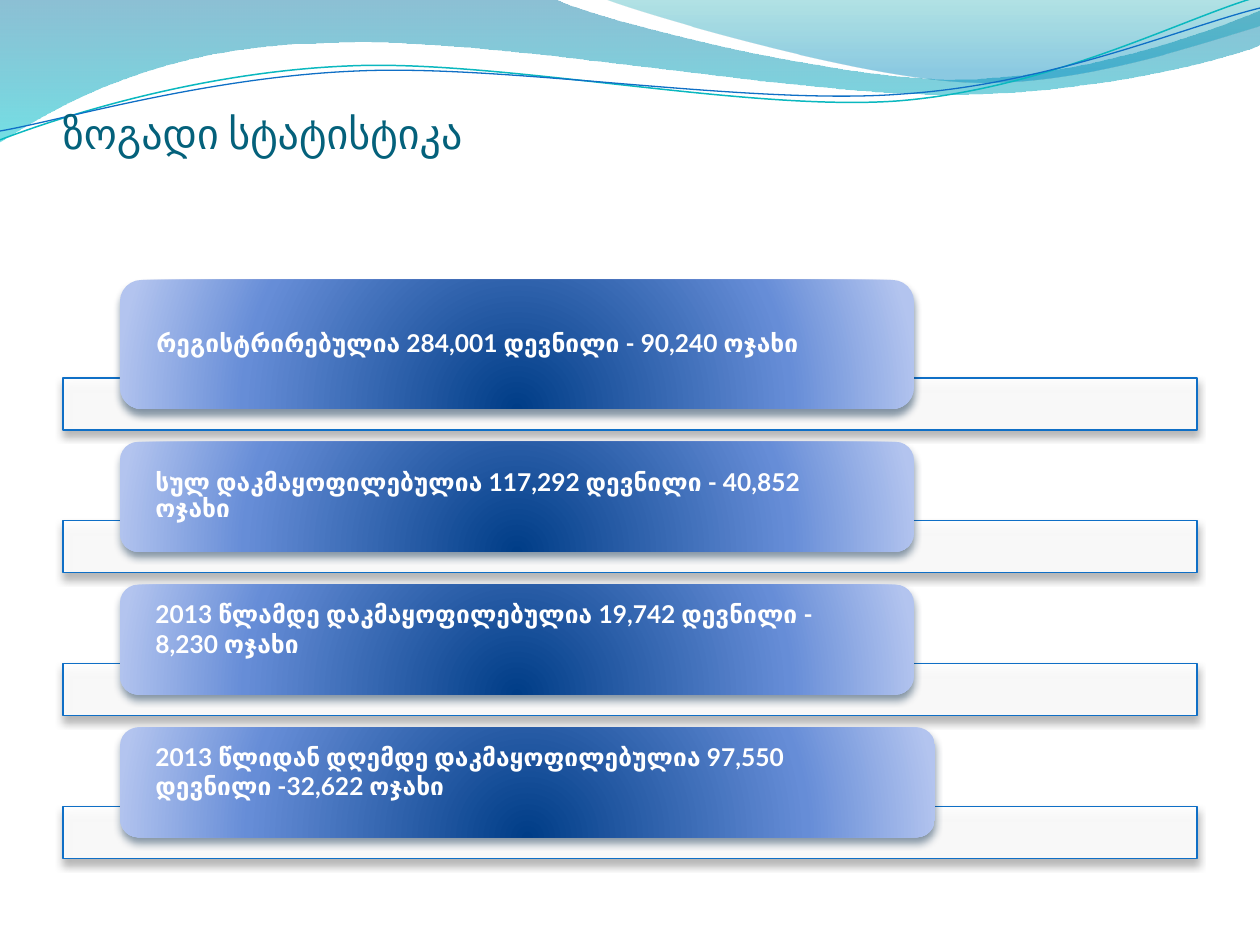
from dataclasses import dataclass
from math import cos, radians, sin

from lxml import etree
from pptx import Presentation
from pptx.dml.color import RGBColor
from pptx.enum.shapes import MSO_SHAPE as SHAPE
from pptx.enum.text import MSO_ANCHOR as ANCHOR, PP_ALIGN as ALIGN
from pptx.oxml.ns import qn
from pptx.util import Emu, Pt


@dataclass(frozen=True)
class Theme:
    title: str = "04617B"
    label: str = "FFFFFF"
    bar: str = "FFFFFF"
    accent: str = "0F6FC6"
    teal: str = "0AB8BF"
    bar_shadow: str = "5A5A5A"
    tab_shadow: str = "042747"
    title_font: str = "Calibri"
    label_font: str = "Lato"
    title_size: int = 24
    label_size: int = 14


T = Theme()
PX = 914400 / 126  # EMU per px

TITLE = "ზოგადი სტატისტიკა"

# label, tab width, tab height, bottom inset, line spacing
ROWS = [
    ("რეგისტრირებულია 284,001 დევნილი - 90,240 ოჯახი", 794, 129, 0, 0.9),
    ("სულ დაკმაყოფილებულია 117,292 დევნილი - 40,852 ოჯახი", 794, 110, 0, 0.9),
    ("2013 წლამდე დაკმაყოფილებულია 19,742 დევნილი - 8,230 ოჯახი", 794, 110, 22, 1.0),
    ("2013 წლიდან დღემდე დაკმაყოფილებულია 97,550 დევნილი -32,622 ოჯახი", 815, 110, 22, 1.0),
]
BAR_X, BAR_Y, BAR_W, BAR_H, PITCH = 63, 378, 1134, 52, 142.8
TAB_X, TAB_OVERLAP, LABEL_INSET = 120, 31, 30
LABEL_MARGIN = 0.049  # share of the tab height

# A path is a start point, then steps: one point is a line, three are a curve.
# Gradient stops: position %, colour, opacity %
WAVES = [
    ([(0, 0), [(554, -1)],
      [(600, 21), (837, 79), (955, 79)], [(1075, 79), (1207, 33), (1260, 11)],
      [(1261, 45)],
      [(1239, 55), (1096, 96), (940, 94)], [(784, 94), (481, 35), (324, 43)],
      [(163, 45), (58, 105), (-1, 142)], [(0, 0)]],
     [(0, "0074A1", 45), (100, "00C6CF", 55)]),
    ([(604, -1),
      [(641, 14), (859, 78), (969, 82)], [(1079, 87), (1211, 40), (1260, 26)],
      [(1260, 0)], [(604, -1)]],
     [(0, "00A1A9", 30), (80, "008BBF", 45)]),
]
STRANDS = [
    ([(0, 140), [(60, 117), (199, 72), (349, 66)],
      [(498, 59), (747, 112), (898, 101)], [(1049, 89), (1182, 19), (1257, -3)]],
     (629, 72), T.teal, 0.85),
    ([(0, 131), [(59, 121), (207, 77), (357, 71)],
      [(508, 64), (752, 106), (903, 94)], [(1053, 84), (1186, 26), (1260, 8)]],
     (629, 74), T.accent, 0.75),
]
STRAND_TILT = -2.7
TAB_STOPS = [(0, "003D87", 100), (68, "668DD7", 100), (100, "B3C4EF", 100)]
GLOW_RECT = {"l": 50000, "t": 130000, "r": 50000, "b": -30000}


def px(n):
    return Emu(round(n * PX))


def sub(parent, tag, **attrs):
    return etree.SubElement(parent, qn(f"a:{tag}"), {k: str(v) for k, v in attrs.items()})


def add_color(parent, color, opacity):
    clr = sub(parent, "srgbClr", val=color)
    if opacity < 100:
        sub(clr, "alpha", val=opacity * 1000)


def set_line(sp, color=None, width=0.75):
    if color is None:
        sp.line.fill.background()
    else:
        sp.line.color.rgb = RGBColor.from_string(color)
        sp.line.width = Pt(width)


def set_gradient(sp, stops, radial=False):
    sp.fill.background()
    no_fill = sp._element.spPr.find(qn("a:noFill"))
    grad = etree.Element(qn("a:gradFill"), {"rotWithShape": "1"})
    no_fill.getparent().replace(no_fill, grad)
    stop_list = sub(grad, "gsLst")
    for pos, color, opacity in stops:
        add_color(sub(stop_list, "gs", pos=pos * 1000), color, opacity)
    if radial:
        sub(sub(grad, "path", path="circle"), "fillToRect", **GLOW_RECT)
    else:
        sub(grad, "lin", ang=5400000, scaled=0)


def set_shadow(sp, color):
    sp.shadow.inherit = False
    effects = sp._element.spPr.find(qn("a:effectLst"))
    shadow = sub(effects, "outerShdw", blurRad=Pt(4.5), dist=Pt(3), dir=5400000, rotWithShape=0)
    add_color(shadow, color, 48)


def turn(point, pivot, degrees):
    a = radians(degrees)
    dx, dy = point[0] - pivot[0], point[1] - pivot[1]
    return pivot[0] + dx * cos(a) - dy * sin(a), pivot[1] + dx * sin(a) + dy * cos(a)


def add_path(s, path, close, pivot=(0, 0), tilt=0):
    """Build the outline through all points, then join each three into a curve."""
    start, *steps = path
    points = [start] + [point for step in steps for point in step]
    first, *rest = [tuple(map(px, turn(point, pivot, -tilt))) for point in points]
    builder = s.shapes.build_freeform(*first, scale=1.0)
    builder.add_line_segments(rest, close=close)
    sp = builder.convert_to_shape()
    sp.rotation = tilt % 360
    sp.shadow.inherit = False
    lines = iter(list(sp._element.spPr.iter(qn("a:lnTo"))))
    for step in steps:
        segment = [next(lines) for _ in step]
        if len(step) == 3:
            curve = etree.Element(qn("a:cubicBezTo"))
            segment[0].addprevious(curve)
            for line in segment:
                curve.append(line[0])
                line.getparent().remove(line)
    return sp


def add_box(s, kind, x, y, w, h):
    return s.shapes.add_shape(kind, px(x), px(y), px(w), px(h))


def add_text(s, text, x, y, w, h, *, font, size, color, bold=False,
             anchor=ANCHOR.MIDDLE, insets=(0, 0, 0, 0), spacing=1.0):
    tf = s.shapes.add_textbox(px(x), px(y), px(w), px(h)).text_frame
    tf.word_wrap = True
    tf.vertical_anchor = anchor
    tf.margin_left, tf.margin_top, tf.margin_right, tf.margin_bottom = map(px, insets)
    p = tf.paragraphs[0]
    p.alignment = ALIGN.LEFT
    p.line_spacing = spacing
    r = p.add_run()
    r.text = text
    r.font.name, r.font.size, r.font.bold = font, Pt(size), bold
    r.font.color.rgb = RGBColor.from_string(color)


def add_row(s, bar_y, text, width, height, bottom, spacing):
    bar = add_box(s, SHAPE.RECTANGLE, BAR_X, bar_y, BAR_W, BAR_H)
    bar.fill.solid()
    bar.fill.fore_color.rgb = RGBColor.from_string(T.bar)
    sub(bar._element.spPr.find(qn("a:solidFill"))[0], "alpha", val=90000)
    set_line(bar, T.accent)
    set_shadow(bar, T.bar_shadow)

    tab_y = bar_y + TAB_OVERLAP - height
    tab = add_box(s, SHAPE.ROUNDED_RECTANGLE, TAB_X, tab_y, width, height)
    set_gradient(tab, TAB_STOPS, radial=True)
    set_line(tab)
    set_shadow(tab, T.tab_shadow)

    m = height * LABEL_MARGIN
    add_text(s, text, TAB_X + m, tab_y + m, width - 2 * m, height - 2 * m,
             font=T.label_font, size=T.label_size, color=T.label, bold=True,
             insets=(LABEL_INSET, 0, LABEL_INSET, bottom), spacing=spacing)


def main():
    prs = Presentation()
    prs.slide_width, prs.slide_height = px(1260), px(945)
    s = prs.slides.add_slide(prs.slide_layouts[6])
    for path, stops in WAVES:
        wave = add_path(s, path, close=True)
        set_gradient(wave, stops)
        set_line(wave)
    for path, pivot, color, width in STRANDS:
        strand = add_path(s, path, close=False, pivot=pivot, tilt=STRAND_TILT)
        strand.fill.background()
        set_line(strand, color, width)
    add_text(s, TITLE, BAR_X, 0, BAR_W, 157.5, font=T.title_font, size=T.title_size,
             color=T.title, anchor=ANCHOR.BOTTOM, insets=(0, 6, 0, 0))
    for i, row in enumerate(ROWS):
        add_row(s, BAR_Y + i * PITCH, *row)
    prs.save("out.pptx")


if __name__ == "__main__":
    main()
